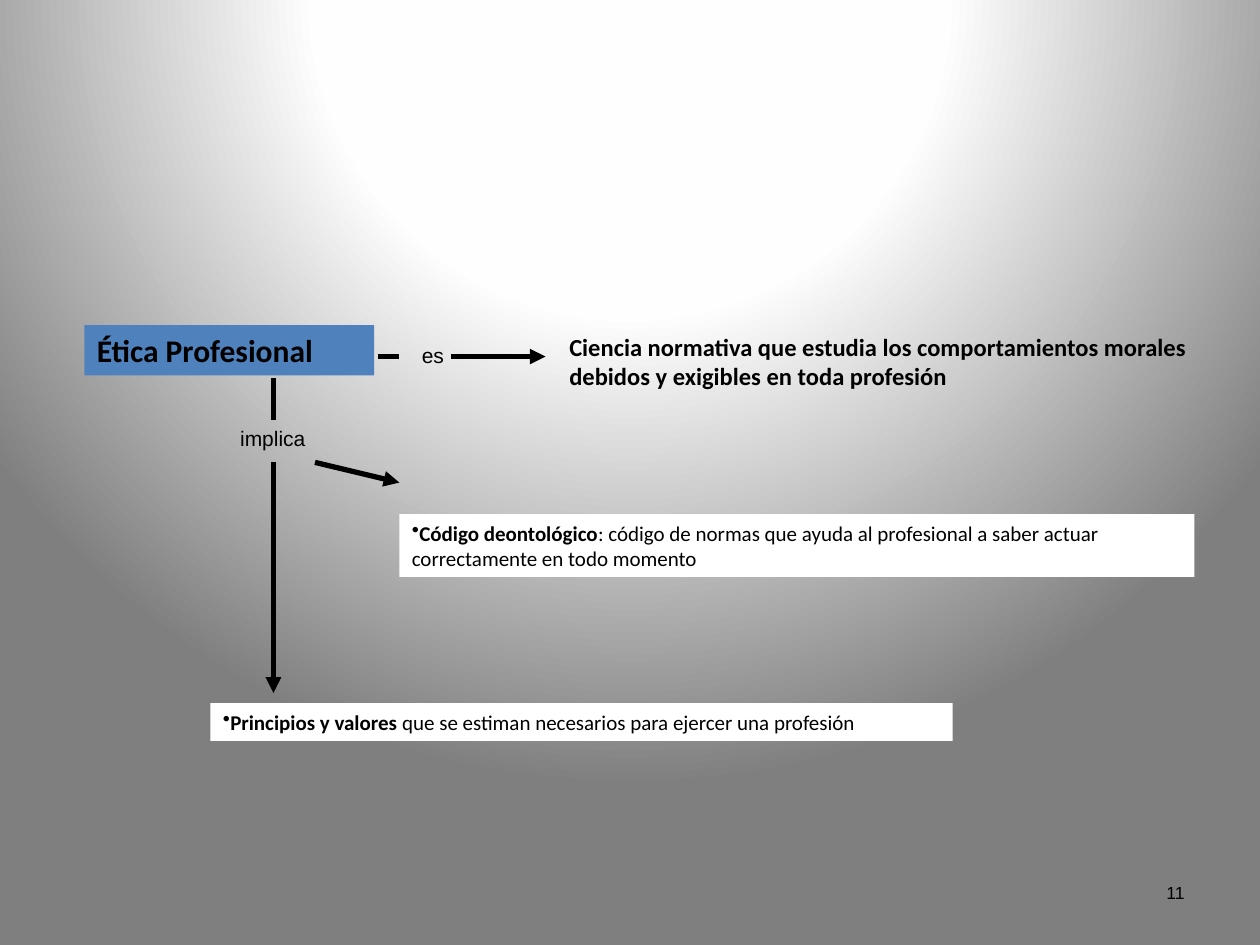
from lxml import etree
from pptx import Presentation
from pptx.dml.color import RGBColor
from pptx.enum.shapes import MSO_CONNECTOR, MSO_SHAPE
from pptx.enum.text import MSO_ANCHOR, PP_ALIGN
from pptx.oxml import parse_xml
from pptx.oxml.ns import nsdecls, qn
from pptx.util import Inches, Pt

LEFT, CENTER, RIGHT = PP_ALIGN.LEFT, PP_ALIGN.CENTER, PP_ALIGN.RIGHT
TOP, MIDDLE = MSO_ANCHOR.TOP, MSO_ANCHOR.MIDDLE
BLACK = RGBColor(0x00, 0x00, 0x00)
WHITE = RGBColor(0xFF, 0xFF, 0xFF)
BLUE = RGBColor(0x4F, 0x81, 0xBD)
GRADIENT_STOPS = [(0, WHITE), (40, RGBColor(0xFE, 0xFE, 0xFE)), (100, RGBColor(0x7F, 0x7F, 0x7F))]

TRUNK_X = 2.17
BRANCH_Y = 2.83
LABEL_TOP, LABEL_BOTTOM = 3.33, 3.67

# Runs are (text, bold); box is left, top, width, height in inches
CONCEPTS = [
    {"runs": [("Ética Profesional", True)], "box": (0.67, 2.58, 2.3, 0.4),
     "size": 18, "fill": BLUE},
    {"runs": [("Ciencia normativa que estudia los comportamientos morales "
               "debidos y exigibles en toda profesión", True)],
     "box": (4.42, 2.58, 5.17, 0.57), "size": 14},
    {"runs": [("Código deontológico", True),
              (": código de normas que ayuda al profesional a saber actuar "
               "correctamente en todo momento", False)],
     "box": (3.17, 4.08, 6.31, 0.5), "size": 12, "fill": WHITE, "bullet": True},
    {"runs": [("Principios y valores", True),
              (" que se estiman necesarios para ejercer una profesión", False)],
     "box": (1.67, 5.58, 5.89, 0.3), "size": 12, "fill": WHITE, "bullet": True},
]
LABELS = [
    {"runs": [("es", False)], "box": (3.25, 2.67, 0.5, 0.3), "size": 12},
    {"runs": [("implica", False)], "box": (1.5, LABEL_TOP, 1.33, 0.3), "size": 12, "align": CENTER},
    {"runs": [("11", False)], "box": (7.17, 6.95, 2.33, 0.4), "size": 10, "align": RIGHT},
]
# Start, end, arrowhead
LINKS = [
    ((3, BRANCH_Y), (3.17, BRANCH_Y), False),
    ((3.58, BRANCH_Y), (4.33, BRANCH_Y), True),
    ((TRUNK_X, 3), (TRUNK_X, LABEL_TOP), False),
    ((TRUNK_X, LABEL_BOTTOM), (TRUNK_X, 5.5), True),
    ((2.5, LABEL_BOTTOM), (3.17, 3.83), True),
]


def paint_background(slide):
    """Fill the slide with a circular gradient centred above its top edge."""
    slide.background.fill.solid()
    stops = "".join(f'<a:gs pos="{position * 1000}"><a:srgbClr val="{color}"/></a:gs>'
                    for position, color in GRADIENT_STOPS)
    gradient = parse_xml(
        f'<a:gradFill {nsdecls("a")} rotWithShape="1"><a:gsLst>{stops}</a:gsLst>'
        '<a:path path="circle"><a:fillToRect l="50000" t="-80000" r="50000" b="180000"/>'
        '</a:path></a:gradFill>')
    properties = slide.element.find(".//" + qn("p:bgPr"))
    properties.replace(properties.find(qn("a:solidFill")), gradient)


def add_text(slide, item, font_name, anchor):
    box = [Inches(length) for length in item["box"]]
    if "fill" in item:
        shape = slide.shapes.add_shape(MSO_SHAPE.RECTANGLE, *box)
        shape.shadow.inherit = False
        shape.fill.solid()
        shape.fill.fore_color.rgb = item["fill"]
        shape.line.fill.background()
    else:
        shape = slide.shapes.add_textbox(*box)
    frame = shape.text_frame
    frame.word_wrap = True
    frame.vertical_anchor = anchor
    paragraph = frame.paragraphs[0]
    paragraph.alignment = item.get("align", LEFT)
    if item.get("bullet"):
        bullet = etree.SubElement(paragraph._p.get_or_add_pPr(), qn("a:buChar"))
        bullet.set("char", "•")
    for text, bold in item["runs"]:
        run = paragraph.add_run()
        run.text = text
        run.font.color.rgb = BLACK
        style = {"name": font_name, "size": Pt(item["size"]), "bold": bold}
        for attribute, value in style.items():
            setattr(run.font, attribute, value)


def add_link(slide, start, end, has_arrow):
    points = [Inches(length) for length in (*start, *end)]
    connector = slide.shapes.add_connector(MSO_CONNECTOR.STRAIGHT, *points)
    connector.line.color.rgb = BLACK
    connector.line.width = Pt(3)
    if has_arrow:
        etree.SubElement(connector.line._get_or_add_ln(), qn("a:tailEnd")).set("type", "triangle")
    etree.SubElement(connector._element.spPr, qn("a:effectLst"))


def main():
    presentation = Presentation()
    presentation.slide_width, presentation.slide_height = Inches(10), Inches(7.5)
    slide = presentation.slides.add_slide(presentation.slide_layouts[6])
    paint_background(slide)
    for concept in CONCEPTS:
        add_text(slide, concept, "Calibri", MIDDLE)
    for link in LINKS:
        add_link(slide, *link)
    for label in LABELS:
        add_text(slide, label, "Arial", TOP)
    presentation.save("out.pptx")


if __name__ == "__main__":
    main()
